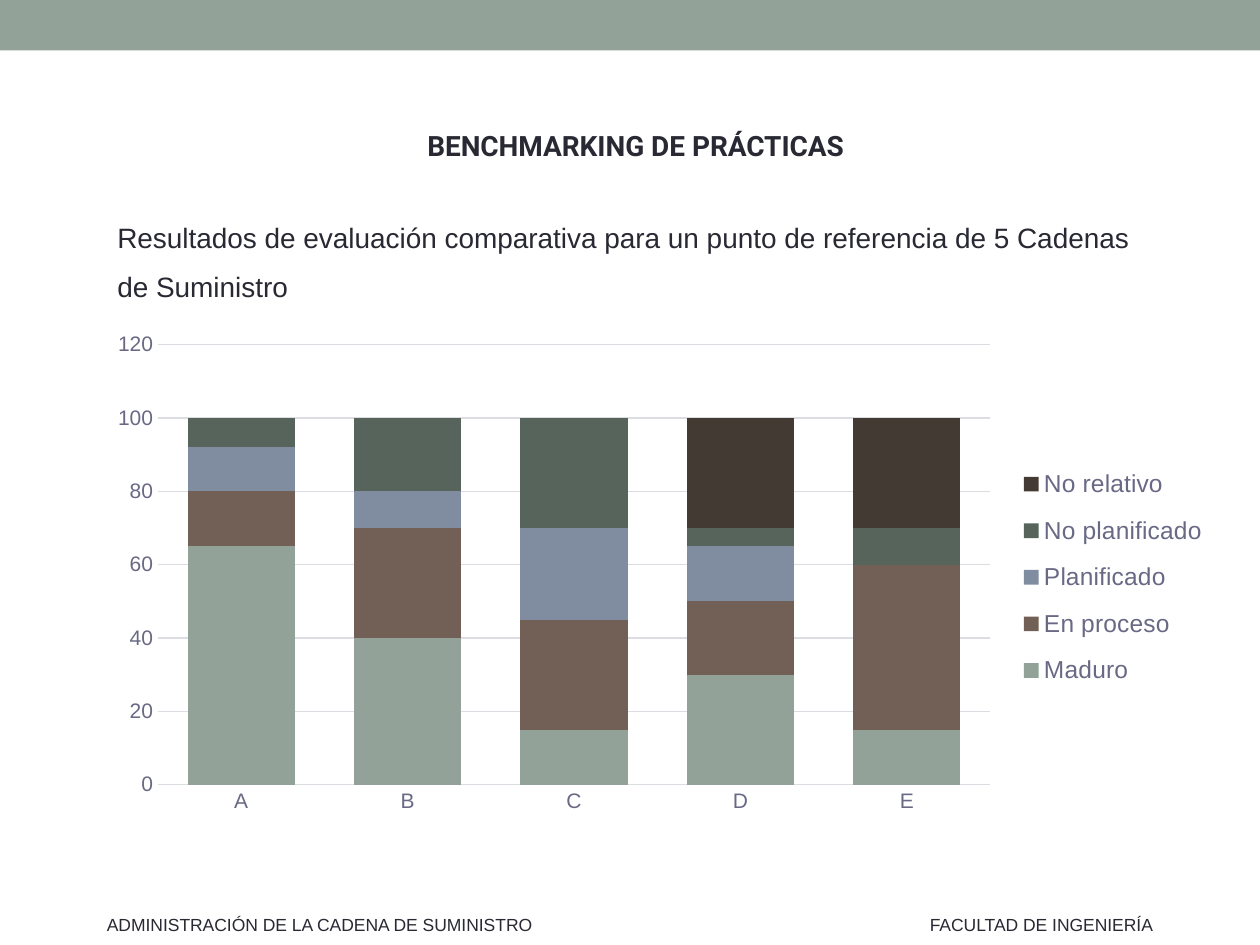
"""Build the benchmarking slide: heading, statement, stacked column chart and footers."""
from dataclasses import dataclass

from pptx import Presentation
from pptx.chart.data import CategoryChartData
from pptx.dml.color import RGBColor
from pptx.enum.chart import XL_CHART_TYPE as CHART, XL_LEGEND_POSITION as LEGEND, XL_TICK_MARK as TICK
from pptx.enum.shapes import MSO_SHAPE as SHAPE
from pptx.enum.text import MSO_ANCHOR as ANCHOR, MSO_AUTO_SIZE as AUTO, PP_ALIGN as ALIGN
from pptx.oxml import parse_xml
from pptx.oxml.ns import nsdecls, qn
from pptx.util import Pt


@dataclass(frozen=True)
class Theme:
    ink: str = "292934"
    muted: str = "696986"
    grid: str = "DCDCE3"
    band: str = "93A299"
    heading_font: str = "Roboto"
    font: str = "Arial"
    main_size: int = 16
    legend_size: int = 14
    axis_size: int = 12
    footer_size: int = 10


THEME = Theme()
CATEGORIES = "ABCDE"
SERIES = [
    ("Maduro", (65, 40, 15, 30, 15), "93A299"),
    ("En proceso", (15, 30, 30, 20, 45), "726056"),
    ("Planificado", (12, 10, 25, 15, None), "808DA0"),
    ("No planificado", (8, 20, 30, 5, 10), "56645B"),
    ("No relativo", (None, None, None, 30, 30), "443A34"),
]
CHART_BOX = (54.7, 185, 641.5, 285)
PLOT_BOX = (90.3, 197, 475.4, 251.5)
LEGEND_BOX = (579, 258, 114, 144)


def rgb(value):
    """Turn a hex string into a colour."""
    return RGBColor.from_string(value)


def place(sp, left, top, width, height):
    """Move and size a shape in points."""
    sp.left, sp.top, sp.width, sp.height = map(Pt, (left, top, width, height))


def style_font(font, size, color, name=THEME.font, bold=False):
    """Set the look of a font."""
    font.size, font.name, font.bold = Pt(size), name, bold
    font.color.rgb = rgb(color)


def write(sp, text, size=THEME.main_size, name=THEME.font, bold=False,
          align=ALIGN.LEFT, spacing=1.0, wrap=True):
    """Write one formatted paragraph into a shape."""
    tf = sp.text_frame
    tf.word_wrap, tf.auto_size, tf.vertical_anchor = wrap, AUTO.NONE, ANCHOR.TOP
    p = tf.paragraphs[0]
    p.alignment, p.line_spacing = align, spacing
    p.space_before = Pt(0)
    r = p.add_run()
    r.text = text
    style_font(r.font, size, THEME.ink, name, bold)
    return p


def remove_bullet(p):
    """Drop the bullet and indent that a body paragraph inherits."""
    pPr = p._p.get_or_add_pPr()
    pPr.set("marL", "0")
    pPr.set("indent", "0")
    pPr.append(parse_xml(f"<a:buNone {nsdecls('a')}/>"))


def add_band(s):
    """Draw the colour band along the top edge."""
    sp = s.shapes.add_shape(SHAPE.RECTANGLE, 0, 0, Pt(720), Pt(28.8))
    sp.shadow.inherit = False
    sp.fill.solid()
    sp.fill.fore_color.rgb = rgb(THEME.band)
    sp.line.fill.background()


def add_footer(s, text, left, width):
    """Add a one-line footer."""
    sp = s.shapes.add_textbox(Pt(left), Pt(519), Pt(width), Pt(19.4))
    write(sp, text, size=THEME.footer_size, wrap=False)


def manual_layout(box, inner=False):
    """Make a chart layout from a box on the slide."""
    left, top, width, height = CHART_BOX
    x, y, w, h = box
    fractions = {"x": (x - left) / width, "y": (y - top) / height, "w": w / width, "h": h / height}
    target = '<c:layoutTarget val="inner"/>' if inner else ""
    modes = "".join(f'<c:{key}Mode val="edge"/>' for key in "xy")
    values = "".join(f'<c:{key} val="{value:.4f}"/>' for key, value in fractions.items())
    return parse_xml(f"<c:layout {nsdecls('c')}><c:manualLayout>{target}{modes}{values}"
                     "</c:manualLayout></c:layout>")


def style_line(line):
    """Give an axis or grid line its thin pale look."""
    line.color.rgb = rgb(THEME.grid)
    line.width = Pt(0.75)


def style_axes(chart):
    """Format both axes and the gridlines."""
    for axis in (chart.category_axis, chart.value_axis):
        axis.major_tick_mark = axis.minor_tick_mark = TICK.NONE
        style_font(axis.tick_labels.font, THEME.axis_size, THEME.muted)
    style_line(chart.category_axis.format.line)
    values = chart.value_axis
    values.minimum_scale, values.maximum_scale, values.major_unit = 0, 120, 20
    values.format.line.fill.background()
    style_line(values.major_gridlines.format.line)


def style_legend(chart):
    """Put the legend on the right."""
    chart.has_legend = True
    legend = chart.legend
    legend.position, legend.include_in_layout = LEGEND.RIGHT, False
    style_font(legend.font, THEME.legend_size, THEME.muted)
    position = next(chart.element.iter(qn("c:legendPos")))
    position.addnext(manual_layout(LEGEND_BOX))


def add_practice_chart(s):
    """Add the stacked columns of practice maturity."""
    data = CategoryChartData()
    data.categories = CATEGORIES
    for name, values, _ in SERIES:
        data.add_series(name, values)
    chart = s.shapes.add_chart(CHART.COLUMN_STACKED, *map(Pt, CHART_BOX), data).chart
    chart.has_title = False
    style_font(chart.font, THEME.footer_size, THEME.ink)
    plot = chart.plots[0]
    plot.gap_width, plot.overlap, plot.vary_by_categories = 55, 100, False
    for series, (_, _, color) in zip(plot.series, SERIES):
        series.format.fill.solid()
        series.format.fill.fore_color.rgb = rgb(color)
    style_axes(chart)
    style_legend(chart)
    area = next(chart.element.iter(qn("c:plotArea")))
    for layout in area.findall(qn("c:layout")):
        area.remove(layout)
    area.insert(0, manual_layout(PLOT_BOX, inner=True))


def main():
    """Build and save the slide."""
    prs = Presentation()
    prs.slide_width, prs.slide_height = Pt(720), Pt(540)
    s = prs.slides.add_slide(prs.slide_layouts[1])
    title, body = s.placeholders
    add_band(s)
    place(title, 59.8, 60.5, 607, 45)
    write(title, "BENCHMARKING DE PRÁCTICAS", name=THEME.heading_font, bold=True,
          align=ALIGN.CENTER, spacing=1.5)
    place(body, 59.8, 114, 607, 64)
    remove_bullet(write(body, "Resultados de evaluación comparativa para un punto de referencia "
                              "de 5 Cadenas de Suministro", spacing=1.45))
    add_footer(s, "ADMINISTRACIÓN DE LA CADENA DE SUMINISTRO", 54, 261.4)
    add_footer(s, "FACULTAD DE INGENIERÍA", 524.2, 145.4)
    add_practice_chart(s)
    prs.save("out.pptx")


if __name__ == "__main__":
    main()
